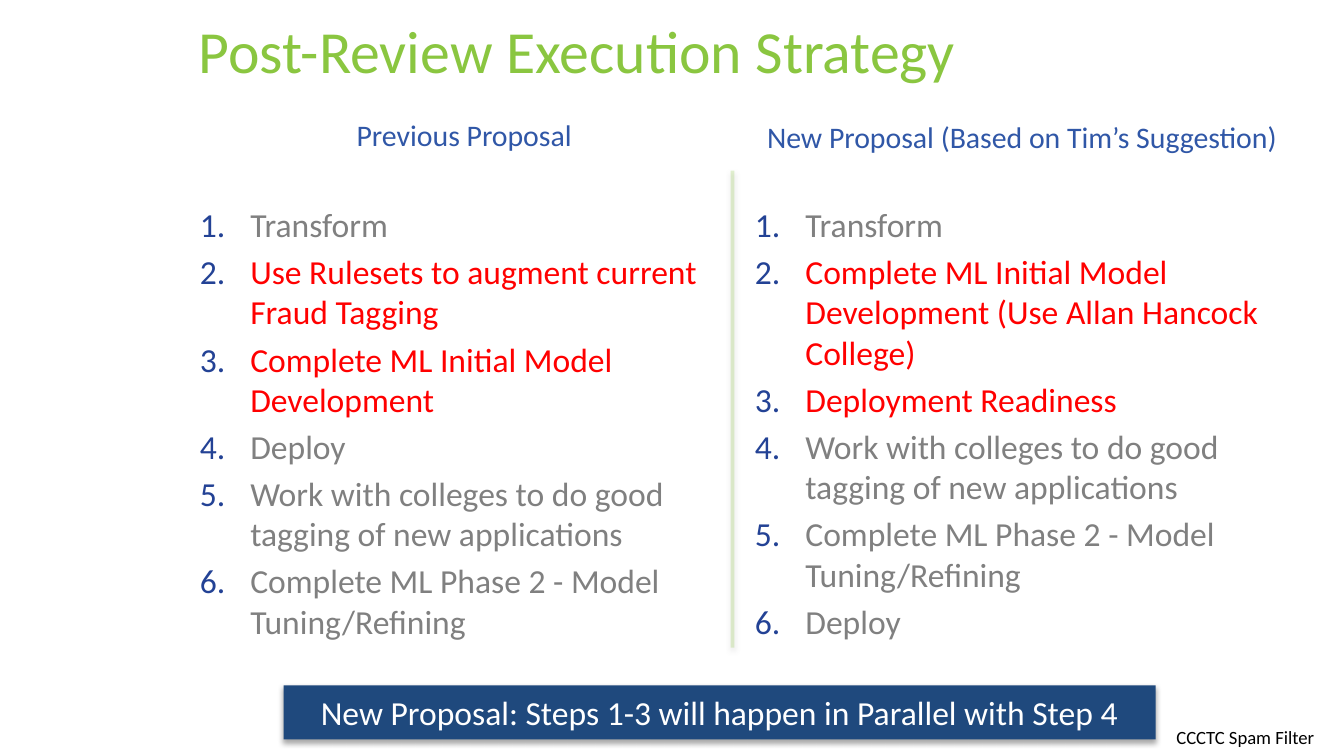
from dataclasses import dataclass

from lxml import etree
from pptx import Presentation
from pptx.dml.color import RGBColor
from pptx.enum import shapes, text
from pptx.oxml import ns
from pptx.util import Pt


@dataclass(frozen=True)
class Theme:
    font: str = "Calibri"
    green: str = "8AC640"
    heading: str = "3057A7"
    number: str = "234295"
    muted: str = "808080"
    changed: str = "FF0000"
    banner: str = "1F497D"
    white: str = "FFFFFF"
    black: str = "000000"
    title_size: float = 32
    body_size: float = 18
    heading_size: float = 16
    footer_size: float = 10


@dataclass(frozen=True)
class Area:
    left: float
    top: float
    width: float
    height: float

    def lengths(self) -> tuple:
        return Pt(self.left), Pt(self.top), Pt(self.width), Pt(self.height)


@dataclass(frozen=True)
class Step:
    wording: str
    changed: bool = False


@dataclass(frozen=True)
class Proposal:
    heading: str
    heading_area: Area
    steps_area: Area
    steps: tuple


THEME = Theme()
INDENT = 27

PROPOSALS = (
    Proposal(
        "Previous Proposal",
        Area(113, 59, 271.5, 26.6),
        Area(100, 105.8, 297.4, 247),
        (
            Step("Transform"),
            Step("Use Rulesets to augment current Fraud Tagging", True),
            Step("Complete ML Initial Model Development", True),
            Step("Deploy"),
            Step("Work with colleges to do good tagging of new applications"),
            Step("Complete ML Phase 2 - Model Tuning/Refining"),
        ),
    ),
    Proposal(
        "New Proposal (Based on Tim’s Suggestion)",
        Area(388.8, 59.8, 317.5, 26.6),
        Area(397.4, 105.8, 290.2, 247),
        (
            Step("Transform"),
            Step("Complete ML Initial Model Development (Use Allan Hancock College)", True),
            Step("Deployment Readiness", True),
            Step("Work with colleges to do good tagging of new applications"),
            Step("Complete ML Phase 2 - Model Tuning/Refining"),
            Step("Deploy"),
        ),
    ),
)


def add_child(parent, tag: str, **attributes):
    return etree.SubElement(parent, ns.qn(tag), {k: str(v) for k, v in attributes.items()})


def format_runs(para, size: float, color: str) -> None:
    for span in para.runs:
        span.font.name = THEME.font
        span.font.size = Pt(size)
        span.font.color.rgb = RGBColor.from_string(color)


def write_line(box, wording: str, size: float, color: str, centred: bool = True) -> None:
    frame = box.text_frame
    frame.word_wrap = True
    frame.text = wording
    para = frame.paragraphs[0]
    para.alignment = text.PP_ALIGN.CENTER if centred else text.PP_ALIGN.LEFT
    format_runs(para, size, color)


def add_label(page, area: Area, wording: str, size: float, color: str,
              centred: bool = True) -> None:
    write_line(page.shapes.add_textbox(*area.lengths()), wording, size, color, centred)


def number_paragraph(para) -> None:
    properties = para._p.get_or_add_pPr()
    properties.set("marL", str(Pt(INDENT)))
    properties.set("indent", str(-Pt(INDENT)))
    add_child(add_child(properties, "a:buClr"), "a:srgbClr", val=THEME.number)
    add_child(properties, "a:buFont", typeface=THEME.font)
    add_child(properties, "a:buAutoNum", type="arabicPeriod")


def add_steps(page, area: Area, steps: tuple) -> None:
    frame = page.shapes.add_textbox(*area.lengths()).text_frame
    frame.word_wrap = True
    frame.text = "\n".join(step.wording for step in steps)
    for index, (para, step) in enumerate(zip(frame.paragraphs, steps)):
        number_paragraph(para)
        if index:
            para.space_before = Pt(0.2 * THEME.body_size)
        format_runs(para, THEME.body_size, THEME.changed if step.changed else THEME.muted)


def add_shadow(shape, distance: float, opacity: int) -> None:
    effects = add_child(shape._element.spPr, "a:effectLst")
    shadow = add_child(effects, "a:outerShdw", blurRad=Pt(3.1), dist=Pt(distance),
                       dir=90 * 60000, rotWithShape=0)
    color = add_child(shadow, "a:srgbClr", val=THEME.black)
    add_child(color, "a:alpha", val=opacity * 1000)


def add_divider(page, x: float, top: float, bottom: float) -> None:
    divider = page.shapes.add_connector(
        shapes.MSO_CONNECTOR.STRAIGHT, Pt(x), Pt(top), Pt(x), Pt(bottom))
    divider.line.width = Pt(2)
    divider.line.color.rgb = RGBColor.from_string(THEME.green)
    color = divider.line._ln.find(".//" + ns.qn("a:srgbClr"))
    add_child(color, "a:alpha", val=23000)
    add_shadow(divider, 1.6, 38)


def add_banner(page, area: Area, wording: str) -> None:
    banner = page.shapes.add_shape(shapes.MSO_SHAPE.RECTANGLE, *area.lengths())
    banner.fill.solid()
    banner.fill.fore_color.rgb = RGBColor.from_string(THEME.banner)
    banner.line.fill.background()
    add_shadow(banner, 1.8, 35)
    write_line(banner, wording, THEME.body_size, THEME.white)


def main() -> None:
    deck = Presentation()
    deck.slide_width, deck.slide_height = Pt(720), Pt(405)
    page = deck.slides.add_slide(deck.slide_layouts[6])

    # Footer
    add_label(page, Area(619.2, 385.2, 95.8, 19.4), "CCCTC Spam Filter",
              THEME.footer_size, THEME.black)

    # Two proposals side by side
    for proposal in PROPOSALS:
        add_steps(page, proposal.steps_area, proposal.steps)
        add_label(page, proposal.heading_area, proposal.heading,
                  THEME.heading_size, THEME.heading)

    # Conclusion and divider
    add_banner(page, Area(152, 367.2, 467.2, 29),
               "New Proposal: Steps 1-3 will happen in Parallel with Step 4")
    add_divider(page, 392.4, 91.4, 347)

    # Title
    add_label(page, Area(99.4, 3.6, 545, 55.4), "Post-Review Execution Strategy",
              THEME.title_size, THEME.green, centred=False)

    deck.save("out.pptx")


if __name__ == "__main__":
    main()
